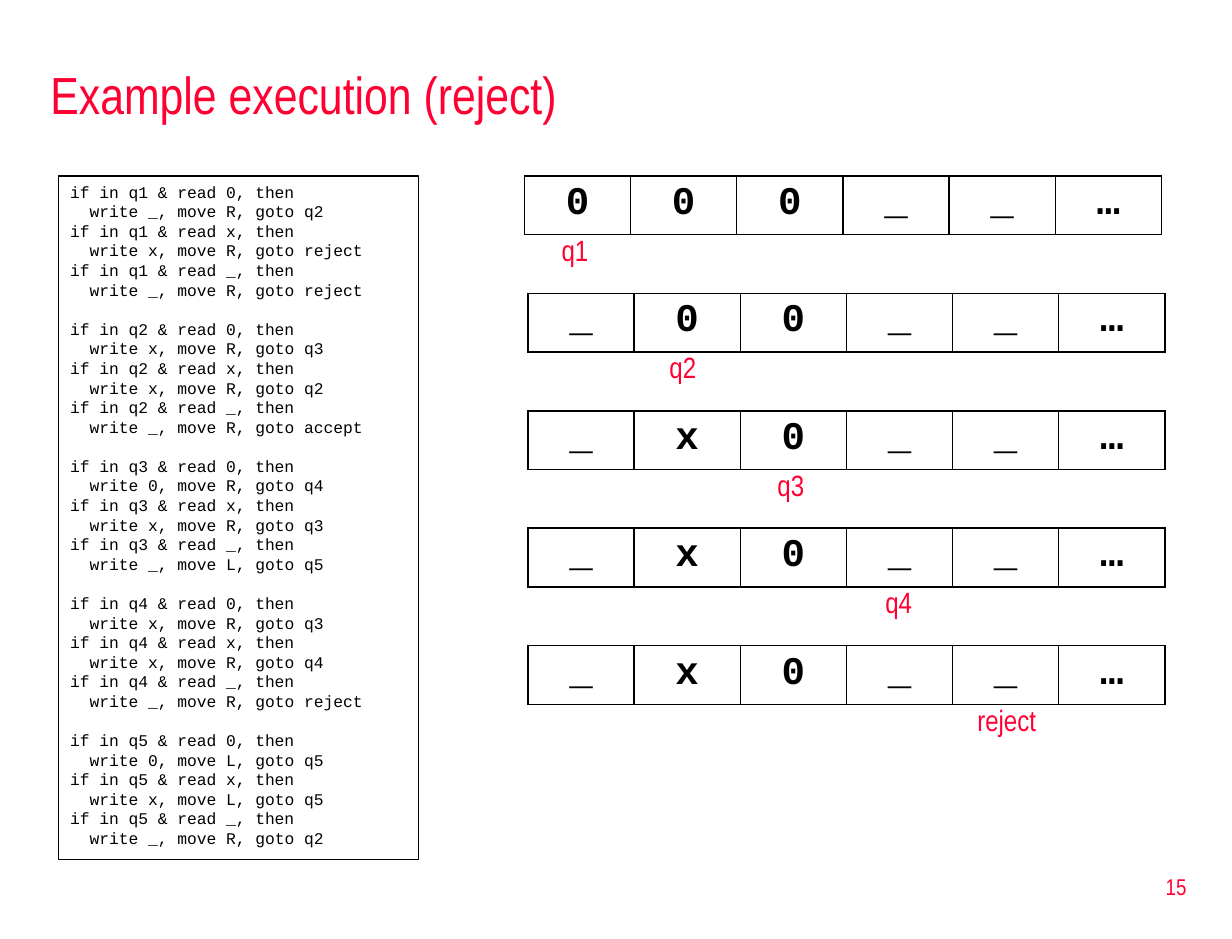
from lxml.etree import SubElement
from pptx import Presentation
from pptx.dml.color import RGBColor
from pptx.enum.shapes import MSO_SHAPE as Shape
from pptx.enum.text import MSO_ANCHOR as Anchor, MSO_AUTO_SIZE as Fit, PP_ALIGN as Align
from pptx.oxml.ns import qn
from pptx.util import Inches, Pt

RED, BLACK = "FF0033", "000000"
SANS, MONO = "Arial Narrow", "Courier New"

# Each state: (write, move, goto) after reading 0, x and _
RULES = {
    "q1": ["_ R q2", "x R reject", "_ R reject"],
    "q2": ["x R q3", "x R q2", "_ R accept"],
    "q3": ["0 R q4", "x R q3", "_ L q5"],
    "q4": ["x R q3", "x R q4", "_ R reject"],
    "q5": ["0 L q5", "x L q5", "_ R q2"],
}
# Tape left edge, tape cells, state under the head
STEPS = [
    (4.47, "000__…", "q1"),
    (4.5, "_00__…", "q2"),
    (4.5, "_x0__…", "q3"),
    (4.5, "_x0__…", "q4"),
    (4.5, "_x0__…", "reject"),
]


def color(text):
    return RGBColor.from_string(text)


def add_run(para, text, size, face, tint, bold=False):
    run = para.add_run()
    run.text = text
    font = run.font
    font.size, font.name, font.bold = Pt(size), face, bold
    font.color.rgb = color(tint)


def add_title(slide, left, top, width, height):
    title = slide.shapes.title
    title.left, title.top = Inches(left), Inches(top)
    title.width, title.height = Inches(width), Inches(height)
    frame = title.text_frame
    frame.vertical_anchor = Anchor.MIDDLE
    para = frame.paragraphs[0]
    para.alignment = Align.LEFT
    add_run(para, "Example execution (reject)", 32, SANS, RED)


def add_label(slide, text, left, top, width, height, size, align, anchor=Anchor.TOP):
    box = slide.shapes.add_textbox(
        Inches(left), Inches(top), Inches(width), Inches(height))
    frame = box.text_frame
    frame.word_wrap = True
    frame.vertical_anchor = anchor
    para = frame.paragraphs[0]
    para.alignment = align
    add_run(para, text, size, SANS, RED)


def add_rules(slide, left, top, width, height):
    box = slide.shapes.add_shape(
        Shape.RECTANGLE, Inches(left), Inches(top), Inches(width), Inches(height))
    box.shadow.inherit = False
    box.fill.background()
    box.line.color.rgb = color(BLACK)
    box.line.width = Pt(0.75)
    frame = box.text_frame
    frame.word_wrap = True
    frame.auto_size = Fit.SHAPE_TO_FIT_TEXT
    frame.vertical_anchor = Anchor.TOP
    para = frame.paragraphs[0]
    for state, moves in RULES.items():
        for sign, move in zip("0x_", moves):
            put, way, goal = move.split()
            if para.runs:
                para = frame.add_paragraph()
                if sign == "0":
                    para.space_before = Pt(12)  # gap between states
            para.alignment = Align.LEFT
            add_run(para, f"if in {state} & read {sign}, then", 10, MONO, BLACK)
            para = frame.add_paragraph()
            para.alignment = Align.LEFT
            # Indent by two characters
            para._p.get_or_add_pPr().set("marL", str(Pt(12)))
            add_run(para, f"write {put}, move {way}, goto {goal}", 10, MONO, BLACK)


def add_edges(cell):
    props = cell._tc.get_or_add_tcPr()
    for spot, side in enumerate(("lnL", "lnR", "lnT", "lnB")):
        line = props.makeelement(qn("a:" + side), {"w": str(Pt(1))})
        fill = SubElement(line, qn("a:solidFill"))
        SubElement(fill, qn("a:srgbClr"), val=BLACK)
        props.insert(spot, line)


def add_tape(slide, signs, left, top, width, height):
    table = slide.shapes.add_table(
        1, len(signs), Inches(left), Inches(top), Inches(width), Inches(height)).table
    table.first_row = table.horz_banding = False
    for cell, sign in zip(table.iter_cells(), signs):
        cell.fill.background()
        add_edges(cell)
        para = cell.text_frame.paragraphs[0]
        para.alignment = Align.CENTER
        add_run(para, sign, 24, MONO, BLACK, bold=True)


def add_steps(slide, left, top):
    for step, (edge, signs, state) in enumerate(STEPS):
        y = top + step
        add_tape(slide, signs, edge, y, 5.43, 0.42)
        # The head moves one cell right at each step
        add_label(slide, state, left + 0.92 * step, y + 0.43, 0.86, 0.4, 18, Align.CENTER)


def main():
    deck = Presentation()
    deck.slide_width, deck.slide_height = Inches(10.5), Inches(8)
    slide = deck.slides.add_slide(deck.slide_layouts[5])
    add_title(slide, 0.33, 0.42, 9.92, 0.75)
    add_rules(slide, 0.5, 1.5, 3.07, 5.82)
    add_steps(slide, 4.47, 1.5)
    # Slide number
    add_label(slide, "15", 8.02, 7.29, 2.19, 0.53, 14, Align.RIGHT, Anchor.MIDDLE)
    deck.save("out.pptx")


if __name__ == "__main__":
    main()
